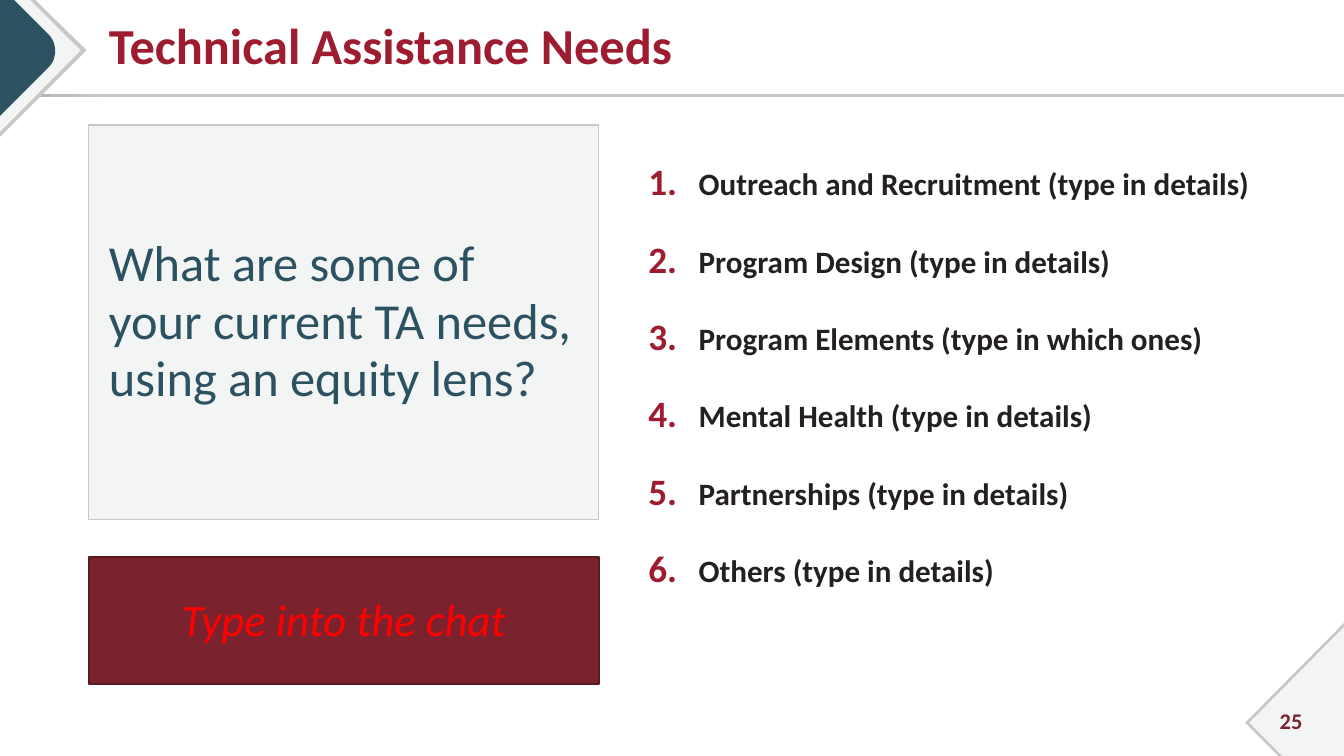
from dataclasses import dataclass, field

from lxml import etree
from pptx import Presentation
from pptx.dml.color import RGBColor
from pptx.enum.shapes import MSO_SHAPE
from pptx.enum.text import MSO_ANCHOR, MSO_AUTO_SIZE, PP_ALIGN
from pptx.oxml.ns import qn
from pptx.util import Inches, Pt

RECTANGLE = MSO_SHAPE.RECTANGLE
TOP, MIDDLE = MSO_ANCHOR.TOP, MSO_ANCHOR.MIDDLE
LEFT, CENTER = PP_ALIGN.LEFT, PP_ALIGN.CENTER
NO_FIT = MSO_AUTO_SIZE.NONE

COLORS = {
    "silver": "C8C8C6",
    "shade": "ABABA8",
    "mist": "F3F4F4",
    "teal": "2C5261",
    "crimson": "9E1C30",
    "maroon": "7A232F",
    "maroon_edge": "5A1A23",
    "ink": "242021",
    "red": "FF0000",
}
FONT = "Calibri"
NEEDS = [
    "Outreach and Recruitment (type in details)",
    "Program Design (type in details)",
    "Program Elements (type in which ones)",
    "Mental Health (type in details)",
    "Partnerships (type in details)",
    "Others (type in details)",
]

Point = tuple[float, float]


@dataclass
class CornerLayer:
    outline: list[Point]
    color: str


@dataclass
class TextPart:
    lines: list[str]
    box: tuple[float, float, float, float]
    size: float
    color: str
    style: dict = field(default_factory=dict)
    frame: dict = field(default_factory=dict)
    paragraph: dict = field(default_factory=dict)
    gap: float = 0
    numbered: bool = False
    fill: str = ""
    edge: str = ""
    edge_width: float = 0


def rgb(name: str) -> RGBColor:
    return RGBColor.from_string(COLORS[name])


def apply(target, values: dict) -> None:
    for name, value in values.items():
        setattr(target, name, value)


def curve(start: Point, first: Point, second: Point, end: Point, steps: int = 12) -> list[Point]:
    points = []
    for step in range(steps + 1):
        t = step / steps
        weights = ((1 - t) ** 3, 3 * t * (1 - t) ** 2, 3 * t**2 * (1 - t), t**3)
        corners = (start, first, second, end)
        points.append(tuple(sum(w * c[axis] for w, c in zip(weights, corners)) for axis in (0, 1)))
    return points


def draw_corner(slide, layer: CornerLayer) -> None:
    points = [(Inches(x), Inches(y)) for x, y in layer.outline]
    builder = slide.shapes.build_freeform(*points[0])
    builder.add_line_segments(points[1:], close=True)
    corner = builder.convert_to_shape()
    corner.shadow.inherit = False
    corner.fill.solid()
    corner.fill.fore_color.rgb = rgb(layer.color)
    corner.line.fill.background()


def draw_title_rule(slide) -> None:
    rule = slide.shapes.add_shape(RECTANGLE, 0, Inches(0.93), Inches(13.33), Inches(0.03))
    rule.shadow.inherit = False
    rule.line.fill.background()
    rule.fill.gradient()
    rule.fill.gradient_angle = 0
    for stop, position, color in zip(rule.fill.gradient_stops, (0, 0.08), ("shade", "silver")):
        stop.position = position
        stop.color.rgb = rgb(color)


def add_number(paragraph) -> None:
    properties = paragraph._p.get_or_add_pPr()
    properties.set("marL", str(Inches(0.5)))
    properties.set("indent", str(-Inches(0.5)))
    color = etree.SubElement(properties, qn("a:buClr"))
    etree.SubElement(color, qn("a:srgbClr"), val=COLORS["crimson"])
    etree.SubElement(properties, qn("a:buSzPct"), val="120000")
    etree.SubElement(properties, qn("a:buFont"), typeface="+mj-lt")
    etree.SubElement(properties, qn("a:buAutoNum"), type="arabicPeriod")


def write_part(shape, part: TextPart) -> None:
    apply(shape, dict(zip(("left", "top", "width", "height"), map(Inches, part.box))))
    if part.fill:
        shape.fill.solid()
        shape.fill.fore_color.rgb = rgb(part.fill)
        shape.line.color.rgb = rgb(part.edge)
        shape.line.width = Pt(part.edge_width)
    frame = shape.text_frame
    apply(frame, {"word_wrap": True, "auto_size": NO_FIT, "vertical_anchor": MIDDLE} | part.frame)
    for index, line in enumerate(part.lines):
        paragraph = frame.paragraphs[0] if index == 0 else frame.add_paragraph()
        spacing = {"alignment": LEFT, "space_before": Pt(part.gap if index else 0)}
        apply(paragraph, spacing | part.paragraph)
        if part.numbered:
            add_number(paragraph)
        run = paragraph.add_run()
        run.text = line
        plain = {"name": FONT, "size": Pt(part.size), "bold": False}
        apply(run.font, plain | part.style)
        run.font.color.rgb = rgb(part.color)


CORNERS_BELOW_RULE = [
    CornerLayer([(13.33, 6.18), (13.33, 7.5), (12.68, 7.5), (12.35, 7.17)], "silver"),
    CornerLayer([(13.33, 6.22), (13.33, 7.5), (12.72, 7.5), (12.39, 7.17)], "mist"),
]
CORNERS_ABOVE_RULE = [
    CornerLayer([(0, 0), (0.35, 0), (0.86, 0.5), (0, 1.36)], "silver"),
    CornerLayer([(0, 0), (0.3, 0), (0.8, 0.5), (0, 1.31)], "mist"),
    CornerLayer(
        [(0, 0), (0.14, 0), *curve((0.48, 0.34), (0.57, 0.43), (0.57, 0.58), (0.48, 0.67)), (0, 1.15)],
        "teal",
    ),
]

BOLD = {"bold": True}
TITLE = TextPart(
    ["Technical Assistance Needs"], (0.88, 0.05, 12.12, 0.86), 36, "crimson", BOLD,
    {"margin_left": Inches(0.2)}, {"line_spacing": 0.9},
)
QUESTION = TextPart(
    ["What are some of your current TA needs, using an equity lens?"],
    (0.88, 1.24, 5.06, 3.91), 36, "teal",
    frame={"margin_left": Inches(0.2), "margin_right": Inches(0.2)},
    paragraph={"line_spacing": 0.95},
    fill="mist", edge="silver", edge_width=0.75,
)
NEEDS_LIST = TextPart(
    NEEDS, (6.33, 1.66, 6.48, 4.47), 22.2, "ink", BOLD,
    {"vertical_anchor": TOP, "margin_top": 0}, {"line_spacing": 0.95},
    gap=30, numbered=True,
)
CHAT_PROMPT = TextPart(
    ["Type into the chat"], (0.88, 5.53, 5.06, 1.26), 32, "red", {"italic": True},
    paragraph={"alignment": CENTER, "line_spacing": 0.95, "space_after": Pt(2)},
    fill="maroon", edge="maroon_edge", edge_width=1.5,
)
PAGE_NUMBER = TextPart(
    ["25"], (12.45, 6.95, 0.71, 0.4), 16, "maroon", BOLD, paragraph={"alignment": CENTER},
)


def main() -> None:
    deck = Presentation()
    apply(deck, {"slide_width": Inches(13.33), "slide_height": Inches(7.5)})
    slide = deck.slides.add_slide(deck.slide_layouts.get_by_name("Comparison"))
    title, question, needs, chat, spare = slide.placeholders
    spare.element.getparent().remove(spare.element)

    for layer in CORNERS_BELOW_RULE:
        draw_corner(slide, layer)
    draw_title_rule(slide)
    for layer in CORNERS_ABOVE_RULE:
        draw_corner(slide, layer)

    page_number = slide.shapes.add_textbox(0, 0, 0, 0)
    parts = [
        (title, TITLE), (question, QUESTION), (needs, NEEDS_LIST),
        (chat, CHAT_PROMPT), (page_number, PAGE_NUMBER),
    ]
    for shape, part in parts:
        write_part(shape, part)
    deck.save("out.pptx")


if __name__ == "__main__":
    main()
